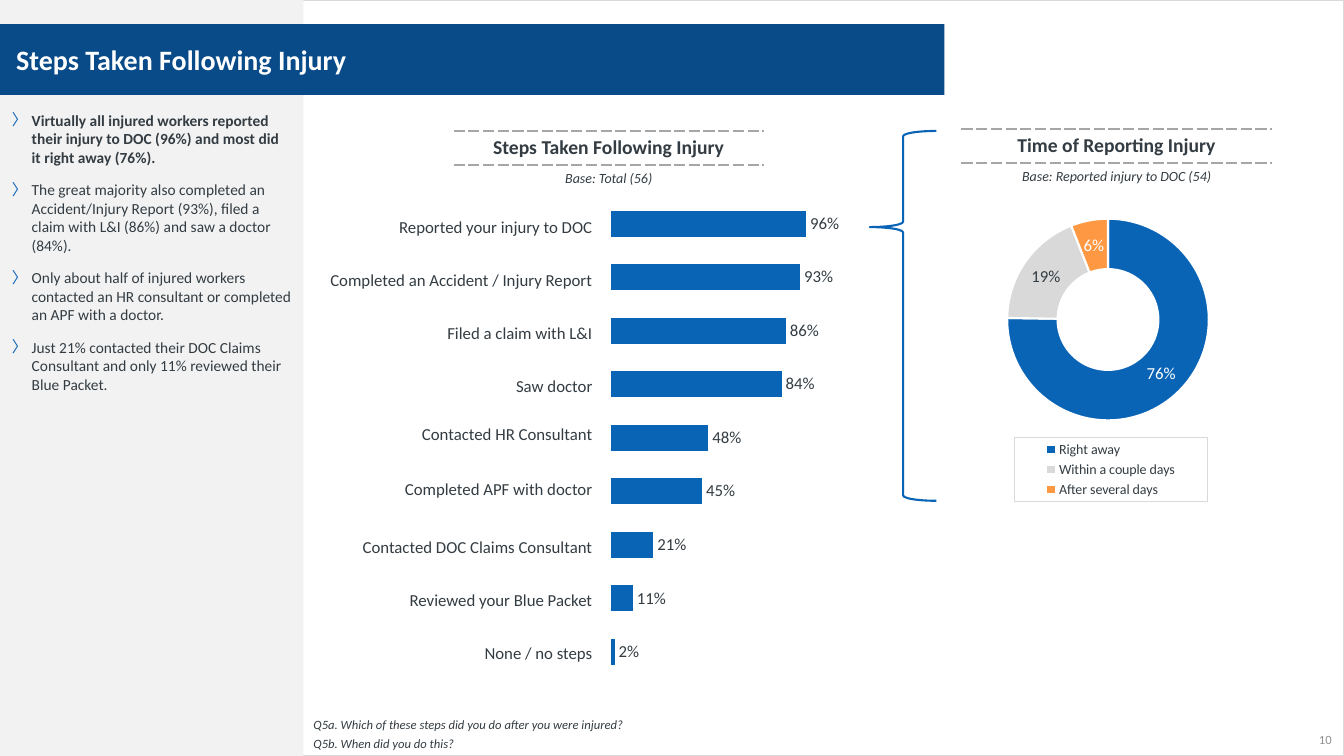
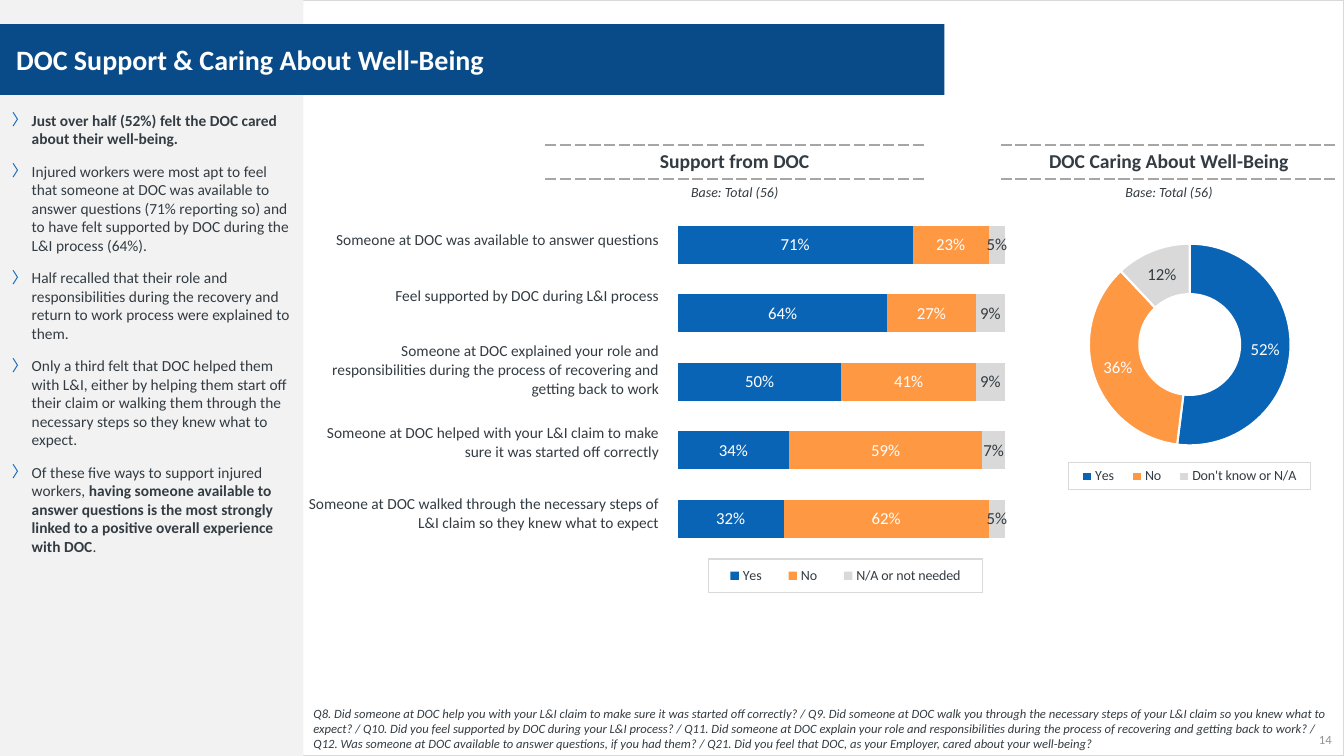
import collections
import dataclasses

import pptx
import pptx.chart.data
import pptx.dml.color
import pptx.enum.chart
import pptx.enum.shapes
import pptx.enum.text
import pptx.oxml
import pptx.oxml.ns
import pptx.util

Cm = pptx.util.Cm
Pt = pptx.util.Pt
ALIGN = pptx.enum.text.PP_ALIGN
ANCHOR = pptx.enum.text.MSO_ANCHOR
SHAPE = pptx.enum.shapes.MSO_SHAPE
CHART = pptx.enum.chart.XL_CHART_TYPE
Box = collections.namedtuple("Box", "x y w h")
Series = collections.namedtuple("Series", "name values color")


@dataclasses.dataclass(frozen=True)
class Theme:
    font: str = "Calibri"
    text: str = "333C42"
    white: str = "FFFFFF"
    muted: str = "909293"
    banner: str = "084B88"
    blue: str = "0A64B6"
    orange: str = "FF9843"
    grey: str = "D9D9D9"
    panel: str = "F2F2F2"
    dash: str = "A6A6A6"
    title: int = 20
    heading: int = 14
    label: int = 12
    body: int = 11
    small: int = 10
    note: int = 9


T = Theme()
PAGE = Box(0, 0, 33.87, 19.05)
SIDEBAR = Box(0, 0, 7.65, 19.05)
BANNER = Box(0, 0.61, 23.8, 1.78)
FOOTNOTE = Box(7.65, 16.15, 26.04, 2.9)
NUMBER = Box(32.82, 18.31, 0.99, 0.66)
RING_PLOT = Box(0.167, 0.1, 0.667, 0.6)
NO_STYLE = "{2D5ABB26-0587-4C30-8999-92F81FD0307C}"


def rgb(color):
    return pptx.dml.color.RGBColor.from_string(color)


def place(box):
    return [Cm(v) for v in box]


def xml(tag, prefix, inner="", attrs=""):
    ns = pptx.oxml.ns.nsdecls(*dict.fromkeys((prefix, "a")))
    return pptx.oxml.parse_xml(f"<{prefix}:{tag} {ns} {attrs}>{inner}</{prefix}:{tag}>")


def solid(color):
    return f'<a:solidFill><a:srgbClr val="{color}"/></a:solidFill>'


def style(font, size, color=T.text, bold=False, italic=False):
    font.name, font.size = T.font, Pt(size)
    font.bold, font.italic = bold, italic
    font.color.rgb = rgb(color)


def style_frame(tf, *args, align=ALIGN.LEFT, **kwargs):
    for p in tf.paragraphs:
        p.alignment = align
        for r in p.runs:
            style(r.font, *args, **kwargs)


def set_margins(target, left, top, right, bottom):
    target.margin_left, target.margin_top = Cm(left), Cm(top)
    target.margin_right, target.margin_bottom = Cm(right), Cm(bottom)


def add_shape(s, box, kind=SHAPE.RECTANGLE, fill=None, line=None, width=1):
    sp = s.shapes.add_shape(kind, *place(box))
    sp.shadow.inherit = False
    if fill:
        sp.fill.solid()
        sp.fill.fore_color.rgb = rgb(fill)
    else:
        sp.fill.background()
    if line:
        sp.line.color.rgb = rgb(line)
        sp.line.width = Pt(width)
    else:
        sp.line.fill.background()
    return sp


def add_text(s, box, text, anchor):
    tf = s.shapes.add_textbox(*place(box)).text_frame
    tf.word_wrap = True
    tf.vertical_anchor = anchor
    tf.text = text
    return tf


def add_sidebar(s, box, points):
    tf = add_shape(s, box, fill=T.panel).text_frame
    tf.word_wrap = True
    tf.vertical_anchor = ANCHOR.TOP
    set_margins(tf, 0.3, 2.8, 0.3, 0.13)
    for i, point in enumerate(points):
        p = tf.add_paragraph() if i else tf.paragraphs[0]
        pPr = p._p.get_or_add_pPr()
        pPr.set("marL", str(Cm(0.5)))
        pPr.set("indent", str(-Cm(0.5)))
        pPr.append(xml("buClr", "a", f'<a:srgbClr val="{T.blue}"/>'))
        pPr.append(xml("buFont", "a", attrs=f'typeface="{T.font}"'))
        pPr.append(xml("buChar", "a", attrs='char="〉"'))
        p.alignment = ALIGN.LEFT
        if i:
            p.space_before = Pt(10)
        for j, piece in enumerate(point.split("**")):
            if piece:
                r = p.add_run()
                r.text = piece
                style(r.font, T.body, bold=j % 2 == 1)


def add_banner(s, box, title):
    tf = add_shape(s, box, fill=T.banner).text_frame
    tf.word_wrap = True
    tf.vertical_anchor = ANCHOR.MIDDLE
    set_margins(tf, 0.41, 0.13, 0.25, 0.13)
    tf.text = title
    style_frame(tf, T.title, T.white, bold=True)


def add_frame(prs, title, number, points, footnote):
    s = prs.slides.add_slide(prs.slide_layouts[6])
    add_shape(s, PAGE, line=T.grey)
    add_sidebar(s, SIDEBAR, points)
    tf = add_text(s, NUMBER, number, ANCHOR.MIDDLE)
    style_frame(tf, T.note, T.muted, align=ALIGN.RIGHT)
    tf = add_text(s, FOOTNOTE, footnote, ANCHOR.BOTTOM)
    style_frame(tf, T.note, italic=True)
    for p in tf.paragraphs:
        p.space_after = Pt(3)
    add_banner(s, BANNER, title)
    return s


def add_column(s, x, y, w, heights, texts):
    box = Box(x, y, w, sum(heights))
    table = s.shapes.add_table(len(texts), 1, *place(box)).table
    table.first_row = table.horz_banding = False
    table._tbl.tblPr.find(pptx.oxml.ns.qn("a:tableStyleId")).text = NO_STYLE
    for row, height, text in zip(table.rows, heights, texts):
        row.height = Cm(height)
        row.cells[0].fill.background()
        row.cells[0].text = text
    return [row.cells[0] for row in table.rows]


def add_heading(s, x, y, w, title, base):
    top, low = add_column(s, x, y, w, [0.86, 1.04], [title, base])
    style_frame(top.text_frame, T.heading, bold=True, align=ALIGN.CENTER)
    style_frame(low.text_frame, T.small, italic=True, align=ALIGN.CENTER)
    for cell, sides in ((top, ("lnT", "lnB")), (low, ("lnT",))):
        for i, side in enumerate(sides):
            line = xml(side, "a", solid(T.dash) + '<a:prstDash val="sysDash"/>', f'w="{Pt(1.5)}"')
            cell._tc.get_or_add_tcPr().insert(i, line)


def add_labels(s, x, y, w, heights, texts, size, raised):
    for i, cell in enumerate(add_column(s, x, y, w, heights, texts)):
        cell.vertical_anchor = ANCHOR.MIDDLE
        set_margins(cell, 0.03, 0.03, 0.03, 0.6 if i in raised else 0.13)
        style_frame(cell.text_frame, size, align=ALIGN.RIGHT)


def layout(area, inner=False):
    parts = '<c:layoutTarget val="inner"/>' if inner else ""
    parts += '<c:xMode val="edge"/><c:yMode val="edge"/>'
    parts += "".join(f'<c:{k} val="{v}"/>' for k, v in area._asdict().items())
    return xml("layout", "c", f"<c:manualLayout>{parts}</c:manualLayout>")


def set_layout(parent, index, element):
    for old in parent.findall(pptx.oxml.ns.qn("c:layout")):
        parent.remove(old)
    parent.insert(index, element)


def add_legend(chart, area):
    chart.has_legend = True
    legend = chart.legend
    legend.position = pptx.enum.chart.XL_LEGEND_POSITION.BOTTOM
    legend.include_in_layout = False
    style(legend.font, T.small)
    el = legend._element
    set_layout(el, 1, layout(area))
    border = f'<a:ln w="{Pt(0.75)}">{solid(T.grey)}</a:ln>'
    el.find(pptx.oxml.ns.qn("c:txPr")).addprevious(xml("spPr", "c", border))


def add_chart(s, kind, box, cats, series, plot, legend=None):
    data = pptx.chart.data.CategoryChartData(number_format="0%")
    data.categories = cats
    for item in series:
        data.add_series(item.name, item.values)
    chart = s.shapes.add_chart(kind, *place(box), data).chart
    chart.has_title = chart.has_legend = False
    style(chart.font, T.small)
    set_layout(chart._chartSpace.chart.plotArea, 0, layout(plot, inner=True))
    if legend:
        add_legend(chart, legend)
    chart.plots[0].vary_by_categories = kind == CHART.DOUGHNUT
    for ser in chart.plots[0].series:
        labels = ser.data_labels
        labels.show_value = True
        labels.number_format = "0%"
        labels.number_format_is_linked = False
        style(labels.font, T.label, T.white)
    return chart


def add_bars(s, kind, box, series, plot, gap, limit, legend=None):
    cats = [str(i + 1) for i in range(len(series[0].values))]
    chart = add_chart(s, kind, box, cats, series, plot, legend)
    chart.category_axis.visible = chart.value_axis.visible = False
    chart.category_axis.reverse_order = True
    chart.value_axis.has_major_gridlines = False
    chart.value_axis.minimum_scale, chart.value_axis.maximum_scale = 0, limit
    stacked = kind == CHART.BAR_STACKED_100
    chart.plots[0].gap_width = gap
    chart.plots[0].overlap = 100 if stacked else 0
    position = pptx.enum.chart.XL_LABEL_POSITION
    for ser, item in zip(chart.plots[0].series, series):
        ser.format.fill.solid()
        ser.format.fill.fore_color.rgb = rgb(item.color)
        ser.data_labels.position = position.CENTER if stacked else position.OUTSIDE_END
        if not stacked or item.color == T.grey:
            style(ser.data_labels.font, T.label)


def add_ring(s, x, y, slices, legend):
    cats, values, colors = zip(*slices)
    chart = add_chart(s, CHART.DOUGHNUT, Box(x, y, 7.62, 8.51), cats,
                      [Series("Series 1", values, None)], RING_PLOT, legend)
    ser = chart.plots[0].series[0]
    for i, color in enumerate(colors):
        point = ser.points[i]
        point.format.fill.solid()
        point.format.fill.fore_color.rgb = rgb(color)
        point.format.line.color.rgb = rgb(T.white)
        point.format.line.width = Pt(1.5)
        if color == T.grey:
            style(point.data_label.font, T.label)


def steps_slide(prs):
    s = add_frame(prs, "Steps Taken Following Injury", "10", [
        "**Virtually all injured workers reported their injury to DOC (96%) and most did it right away (76%).**",
        "The great majority also completed an Accident/Injury Report (93%), filed a claim with L&I (86%) and saw a doctor (84%).",
        "Only about half of injured workers contacted an HR consultant or completed an APF with a doctor.",
        "Just 21% contacted their DOC Claims Consultant and only 11% reviewed their Blue Packet.",
    ], "Q5a. Which of these steps did you do after you were injured?\nQ5b. When did you do this?")
    values = [0.96, 0.93, 0.86, 0.84, 0.48, 0.45, 0.21, 0.11, 0.02]
    add_bars(s, CHART.BAR_CLUSTERED, Box(7.9, 4.65, 13.79, 12.45),
             [Series("Series 1", values, T.blue)], Box(0.543, 0.025, 0.447, 0.975), 107, 1.2)
    add_heading(s, 11.43, 3.3, 7.82, "Steps Taken Following Injury", "Base: Total (56)")
    add_heading(s, 24.23, 3.25, 7.82, "Time of Reporting Injury", "Base: Reported injury to DOC (54)")
    add_ring(s, 24.11, 4.65, [
        ("Right away", 0.76, T.blue),
        ("Within a couple days", 0.19, T.grey),
        ("After several days", 0.06, T.orange),
    ], Box(0.19, 0.75, 0.64, 0.19))
    brace = add_shape(s, Box(21.92, 3.3, 1.68, 9.32), SHAPE.LEFT_BRACE, line=T.blue, width=1.5)
    brace.adjustments[0], brace.adjustments[1] = 0.08, 0.26
    add_labels(s, 6.6, 5.13, 8.36, [1.33] * 4 + [1.6, 1.14] + [1.33] * 3, [
        "Reported your injury to DOC", "Completed an Accident / Injury Report",
        "Filed a claim with L&I", "Saw doctor", "Contacted HR Consultant",
        "Completed APF with doctor", "Contacted DOC Claims Consultant",
        "Reviewed your Blue Packet", "None / no steps",
    ], T.label, raised=(4, 5))


def support_slide(prs):
    s = add_frame(prs, "DOC Support & Caring About Well-Being", "14", [
        "**Just over half (52%) felt the DOC cared about their well-being.**",
        "Injured workers were most apt to feel that someone at DOC was available to answer questions (71% reporting so) and to have felt supported by DOC during the L&I process (64%).",
        "Half recalled that their role and responsibilities during the recovery and return to work process were explained to them.",
        "Only a third felt that DOC helped them with L&I, either by helping them start off their claim or walking them through the necessary steps so they knew what to expect.",
        "Of these five ways to support injured workers, **having someone available to answer questions is the most strongly linked to a positive overall experience with DOC**.",
    ], "Q8. Did someone at DOC help you with your L&I claim to make sure it was started off correctly? / Q9. Did someone at DOC walk you through the necessary steps of your L&I claim so you knew what to expect? / Q10. Did you feel supported by DOC during your L&I process? / Q11. Did someone at DOC explain your role and responsibilities during the process of recovering and getting back to work? / Q12. Was someone at DOC available to answer questions, if you had them? / Q21. Did you feel that DOC, as your Employer, cared about your well-being?")
    add_bars(s, CHART.BAR_STACKED_100, Box(7.65, 4.98, 18.21, 10.59), [
        Series("Yes", [0.71, 0.64, 0.5, 0.34, 0.32], T.blue),
        Series("No", [0.23, 0.27, 0.41, 0.59, 0.62], T.orange),
        Series("N/A or not needed", [0.05, 0.09, 0.09, 0.07, 0.05], T.grey),
    ], Box(0.518, 0.031, 0.453, 0.815), 79, 1, Box(0.56, 0.86, 0.38, 0.08))
    add_heading(s, 13.74, 3.66, 9.55, "Support from DOC", "Base: Total (56)")
    add_heading(s, 25.22, 3.66, 8.48, "DOC Caring About Well-Being", "Base: Total (56)")
    add_ring(s, 26.17, 5.28, [
        ("Yes", 0.52, T.blue), ("No", 0.36, T.orange), ("Don't know or N/A", 0.12, T.grey),
    ], Box(0.1, 0.75, 0.8, 0.08))
    add_labels(s, 7.65, 5.23, 8.99, [1.75, 1.52, 1.78, 1.83, 1.75], [
        "Someone at DOC was available to answer questions",
        "Feel supported by DOC during L&I process",
        "Someone at DOC explained your role and responsibilities during the process of recovering and getting back to work",
        "Someone at DOC helped with your L&I claim to make sure it was started off correctly",
        "Someone at DOC walked through the necessary steps of L&I claim so they knew what to expect",
    ], T.body, raised=(1,))


def main():
    prs = pptx.Presentation()
    prs.slide_width, prs.slide_height = Cm(PAGE.w), Cm(PAGE.h)
    steps_slide(prs)
    support_slide(prs)
    prs.save("out.pptx")


if __name__ == "__main__":
    main()
